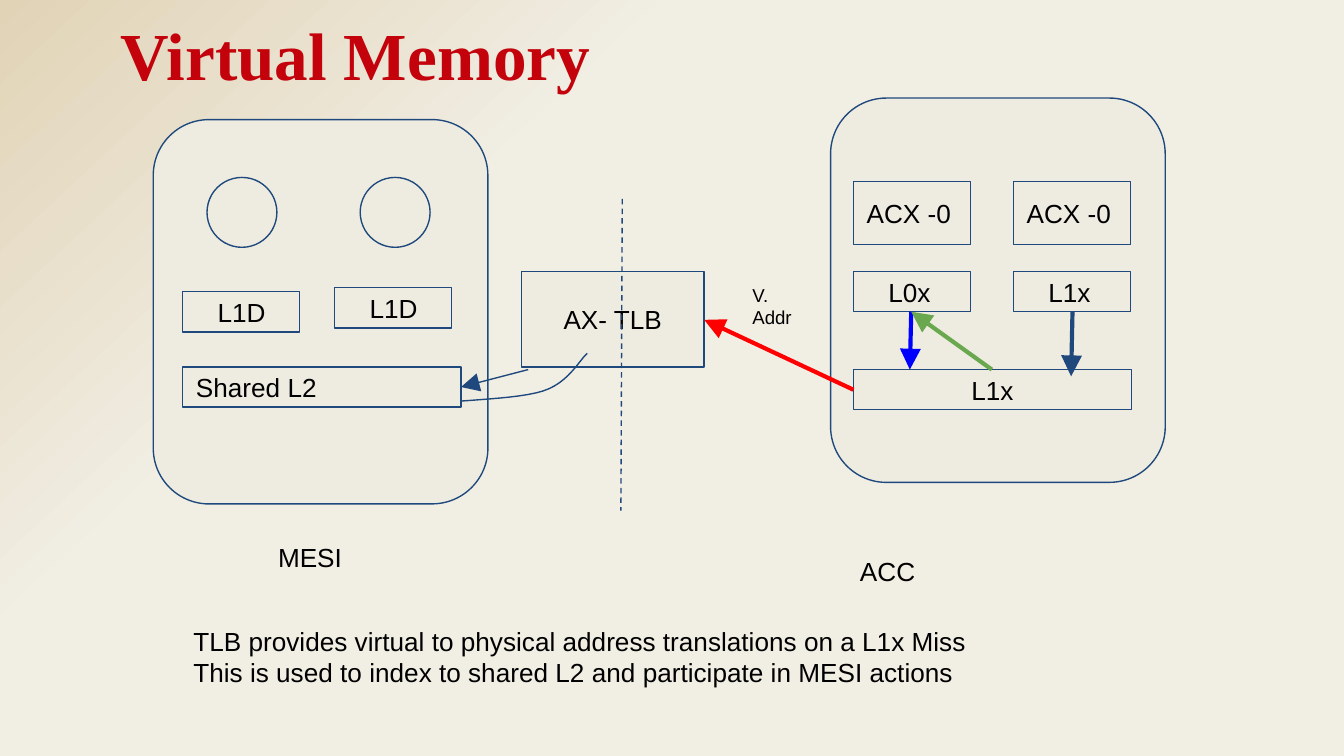
from lxml import etree
from pptx import Presentation
from pptx import util as u
from pptx.dml.color import RGBColor
from pptx.enum import dml, shapes, text
from pptx.oxml.ns import qn

NAVY, CREAM, BLACK = "1F497D", "EEECE1", "000000"
SHAPE = shapes.MSO_SHAPE
LEFT, CENTER = text.PP_ALIGN.LEFT, text.PP_ALIGN.CENTER


def color(value):
    """Turn a hex string into a colour."""
    return RGBColor.from_string(value)


def set_background(s):
    """Fill the slide with a diagonal tan-to-cream gradient."""
    s.background.fill.gradient()
    stops = s._element.find(".//" + qn("a:gsLst"))
    for old in list(stops):
        stops.remove(old)
    for pos, value, alpha in ((0, "E1D3B6", 80), (32, "F1EEE4", 100), (100, "F1EEE4", 100)):
        gs = etree.SubElement(stops, qn("a:gs"), pos=str(pos * 1000))
        clr = etree.SubElement(gs, qn("a:srgbClr"), val=value)
        if alpha < 100:
            etree.SubElement(clr, qn("a:alpha"), val=str(alpha * 1000))
    s._element.find(".//" + qn("a:lin")).set("ang", str(47 * 60000))


def write(sp, words, size=14, align=LEFT, indent=0, font="Arial", ink=BLACK, bold=False):
    """Put formatted text into a shape."""
    tf = sp.text_frame
    tf.word_wrap = True
    tf.margin_left = u.Inches(0.1 + indent)
    tf.margin_right = tf.margin_top = tf.margin_bottom = u.Inches(0.1)
    tf.text = words
    for p in tf.paragraphs:
        p.alignment = align
        for r in p.runs:
            r.font.size = u.Pt(size)
            r.font.name = font
            r.font.bold = bold
            r.font.color.rgb = color(ink)


def add_label(s, x, y, w, h, words, **style):
    """Add a text box."""
    sp = s.shapes.add_textbox(*map(u.Inches, (x, y, w, h)))
    sp.text_frame.vertical_anchor = text.MSO_ANCHOR.TOP
    write(sp, words, **style)


def add_box(s, x, y, w, h, words="", kind=SHAPE.RECTANGLE, **style):
    """Add an outlined cream shape with optional text."""
    sp = s.shapes.add_shape(kind, *map(u.Inches, (x, y, w, h)))
    sp.shadow.inherit = False
    sp.fill.solid()
    sp.fill.fore_color.rgb = color(CREAM)
    sp.line.color.rgb = color(NAVY)
    sp.line.width = u.Pt(0.75)
    if words:
        sp.text_frame.vertical_anchor = text.MSO_ANCHOR.MIDDLE
        write(sp, words, **style)


def add_line(s, x1, y1, x2, y2, ink=NAVY, width=0.75, arrow=True):
    """Add an arrow, or a dashed divider when arrow is False."""
    ln = s.shapes.add_connector(shapes.MSO_CONNECTOR.STRAIGHT, *map(u.Inches, (x1, y1, x2, y2)))
    ln.line.color.rgb = color(ink)
    ln.line.width = u.Pt(width)
    if arrow:
        etree.SubElement(ln._element.spPr.find(qn("a:ln")), qn("a:tailEnd"),
                         type="triangle", w="lg", len="lg")
    else:
        ln.line.dash_style = dml.MSO_LINE.DASH
    etree.SubElement(ln._element.spPr, qn("a:effectLst"))


def add_curve(s, start, segments, steps=12):
    """Draw joined cubic curves as a smooth open outline."""
    points = [start]
    for p1, p2, p3 in segments:
        p0 = points[-1]
        for i in range(1, steps + 1):
            t = i / steps
            weights = ((1 - t) ** 3, 3 * t * (1 - t) ** 2, 3 * t * t * (1 - t), t ** 3)
            points.append(tuple(sum(k * p[axis] for k, p in zip(weights, (p0, p1, p2, p3)))
                                for axis in (0, 1)))
    points = [(u.Inches(x), u.Inches(y)) for x, y in points]
    fb = s.shapes.build_freeform(*points[0])
    fb.add_line_segments(points[1:], close=False)
    sp = fb.convert_to_shape()
    sp.shadow.inherit = False
    sp.fill.background()
    sp.line.color.rgb = color(NAVY)
    sp.line.width = u.Pt(0.75)


def add_mesi(s, x, y, w, h):
    """Build the MESI cores and caches."""
    for dx in (0.4, 1.54):
        add_box(s, x + dx, y + 0.43, 0.52, 0.52, kind=SHAPE.OVAL)
    for dx, dy in ((0.22, 1.28), (1.35, 1.25)):
        add_box(s, x + dx, y + dy, 0.87, 0.3, "L1D", indent=0.16)
    add_box(s, x + 0.22, y + 1.84, 2.07, 0.3, "Shared L2")
    add_label(s, x + 0.83, y + h + 0.18, 1.92, 0.72, "MESI")


def add_acc(s, x, y, w, h):
    """Build the ACC accelerators, caches and their arrows."""
    for dx, cache in ((0.17, "L0x"), (1.36, "L1x")):
        add_box(s, x + dx, y + 0.62, 0.87, 0.47, "ACX -0")
        add_box(s, x + dx, y + 1.29, 0.87, 0.3, cache, indent=0.16)
    add_box(s, x + 0.17, y + 2.02, 2.07, 0.3, "L1x", align=CENTER)
    for x1, y1, x2, y2, ink in ((0.6, 1.59, 0.59, 2.02, "0000FF"),
                                (1.2, 2.02, 0.6, 1.59, "6AA84F"),
                                (1.8, 1.59, 1.79, 2.07, NAVY)):
        add_line(s, x + x1, y + y1, x + x2, y + y2, ink, 2.25)
    add_label(s, x + 0.12, y + h + 0.44, 1.68, 0.8, "ACC")


def add_tlb(s, x, y, w, h):
    """Build the TLB with its divider and links to both sides."""
    add_box(s, x, y, w, h, "AX- TLB", align=CENTER)
    add_line(s, x + 0.75, y - 0.54, x + 0.74, y + 1.78, arrow=False)
    add_line(s, x + 2.47, y + 0.88, x + w, y + 0.36, "FF0000", 2.25)
    add_line(s, x + 0.05, y + 0.73, x - 0.45, y + 0.86)
    add_label(s, x + 1.62, y - 0.01, 0.6, 0.3, "V. Addr", size=10)
    add_curve(s, (x - 0.62, y + 0.98), [
        ((x - 0.49, y + 0.96), (x - 0.02, y + 0.95), (x + 0.16, y + 0.89)),
        ((x + 0.35, y + 0.83), (x + 0.43, y + 0.66), (x + 0.49, y + 0.61))])


def main():
    """Build and save the slide."""
    prs = Presentation()
    prs.slide_width = u.Inches(10)
    prs.slide_height = prs.slide_width * 9 // 16
    s = prs.slides.add_slide(prs.slide_layouts[6])
    set_background(s)
    mesi, acc = (1.14, 0.89, 2.49, 2.86), (6.18, 0.73, 2.49, 2.86)
    for panel in (mesi, acc):
        add_box(s, *panel, kind=SHAPE.ROUNDED_RECTANGLE)
    add_label(s, 0.8, 0, 7.81, 0.71, "Virtual Memory", size=36,
              font="Times New Roman", ink="C3020B", bold=True)
    add_acc(s, *acc)
    add_tlb(s, 3.88, 2.02, 1.36, 0.71)
    add_mesi(s, *mesi)
    add_label(s, 1.34, 4.55, 7.08, 0.89,
              "TLB provides virtual to physical address translations on a L1x Miss\n"
              "This is used to index to shared L2 and participate in MESI actions")
    prs.save("out.pptx")


if __name__ == "__main__":
    main()
